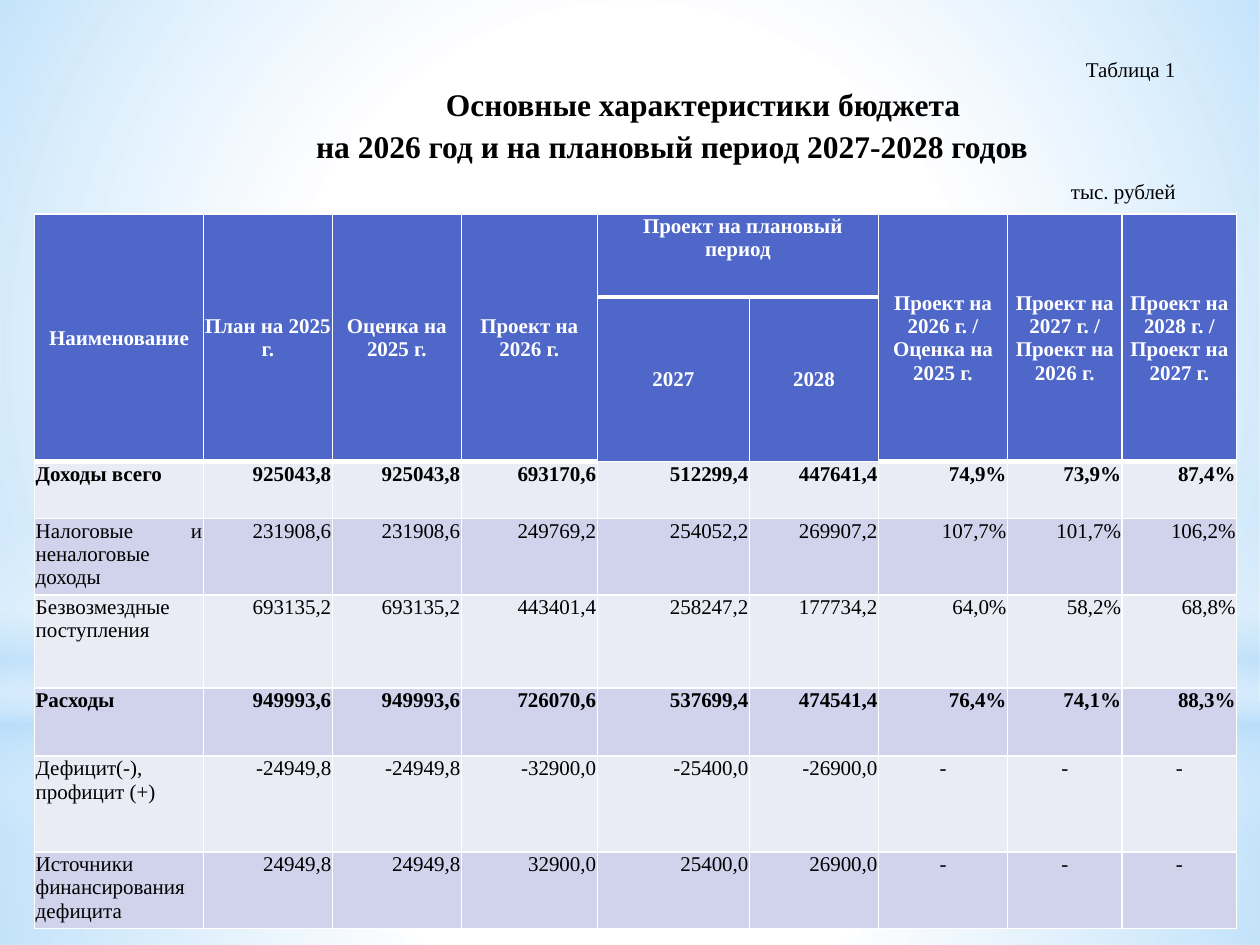
import pptx
import pptx.util
import pptx.dml.color
import pptx.enum.shapes
import pptx.enum.text
import pptx.oxml
import pptx.oxml.ns

Cm, Pt = pptx.util.Cm, pptx.util.Pt
ALIGN = pptx.enum.text.PP_ALIGN
ANCHOR = pptx.enum.text.MSO_ANCHOR
SHAPE = pptx.enum.shapes.MSO_SHAPE

COLOURS = {"white": "FFFFFF", "sky": "B4DCFA", "text": "000000",
           "header": "4E67C8", "light": "E9EBF5", "dark": "D0D3EB"}
NAMESPACE = pptx.oxml.ns.nsdecls("a")

COLUMN_WIDTHS = [3.4, 2.6, 2.6, 2.74, 3.07, 2.6, 2.6, 2.31, 2.31]
ROW_HEIGHTS = [1.68, 3.31, 1.15, 1.35, 1.88, 1.37, 1.93, 1.37]
PERIOD_COLUMNS = (4, 5)
HEADERS = ["Наименование", "План на 2025 г.", "Оценка на 2025 г.", "Проект на 2026 г.",
           "Проект на плановый период", None, "Проект на 2026 г. / Оценка на 2025 г.",
           "Проект на 2027 г. / Проект на 2026 г.", "Проект на 2028 г. / Проект на 2027 г."]
PERIODS = ["2027", "2028"]
BOLD_ROWS = ("Доходы всего", "Расходы")
BODY = [
    ["Доходы всего", "925043,8", "925043,8", "693170,6", "512299,4", "447641,4",
     "74,9%", "73,9%", "87,4%"],
    ["Налоговые и неналоговые доходы", "231908,6", "231908,6", "249769,2", "254052,2",
     "269907,2", "107,7%", "101,7%", "106,2%"],
    ["Безвозмездные поступления", "693135,2", "693135,2", "443401,4", "258247,2",
     "177734,2", "64,0%", "58,2%", "68,8%"],
    ["Расходы", "949993,6", "949993,6", "726070,6", "537699,4", "474541,4",
     "76,4%", "74,1%", "88,3%"],
    ["Дефицит(-), профицит (+)", "-24949,8", "-24949,8", "-32900,0", "-25400,0",
     "-26900,0", "-", "-", "-"],
    ["Источники финансирования дефицита", "24949,8", "24949,8", "32900,0", "25400,0",
     "26900,0", "-", "-", "-"],
]


class SlideBuilder:
    font_name = "Times New Roman"

    def __init__(self, slide):
        self.slide = slide

    def gradient_shape(self, kind, left, top, width, height, stops, angle=None):
        """Stops are (position, colour, opacity) in percent; radial without an angle."""
        shape = self.slide.shapes.add_shape(kind, Cm(left), Cm(top), Cm(width), Cm(height))
        shape.shadow.inherit = False
        shape.line.fill.background()
        stop_xml = "".join(
            f'<a:gs pos="{position * 1000}"><a:srgbClr val="{COLOURS[colour]}">'
            f'<a:alpha val="{opacity * 1000}"/></a:srgbClr></a:gs>'
            for position, colour, opacity in stops)
        if angle is None:
            direction = ('<a:path path="circle"><a:fillToRect l="50000" t="50000" '
                         'r="50000" b="50000"/></a:path>')
        else:
            direction = f'<a:lin ang="{angle * 60000}" scaled="0"/>'
        gradient = pptx.oxml.parse_xml(
            f'<a:gradFill {NAMESPACE} rotWithShape="1"><a:gsLst>{stop_xml}</a:gsLst>'
            f'{direction}</a:gradFill>')
        shape._element.spPr.find(pptx.oxml.ns.qn("a:prstGeom")).addnext(gradient)

    def fill_paragraph(self, paragraph, text, colour="text", size=12, bold=False,
                       align=ALIGN.LEFT, indent=0, space_before=0, line_spacing=1.0):
        properties = paragraph._p.get_or_add_pPr()
        properties.set("marL", "0")
        properties.set("indent", str(int(Cm(indent))))
        paragraph.text = text
        settings = {"alignment": align, "space_before": Pt(space_before),
                    "line_spacing": line_spacing}
        for name, value in settings.items():
            setattr(paragraph, name, value)
        for run in paragraph.runs:
            for name, value in {"name": self.font_name, "size": Pt(size), "bold": bold}.items():
                setattr(run.font, name, value)
            run.font.color.rgb = pptx.dml.color.RGBColor.from_string(COLOURS[colour])

    def text_box(self, left, top, width, height, paragraphs):
        box = self.slide.shapes.add_textbox(Cm(left), Cm(top), Cm(width), Cm(height))
        frame = box.text_frame
        frame.word_wrap = True
        frame.vertical_anchor = ANCHOR.MIDDLE
        for index, (text, style) in enumerate(paragraphs):
            paragraph = frame.add_paragraph() if index else frame.paragraphs[0]
            self.fill_paragraph(paragraph, text, **style)

    def table(self, left, top, widths, heights):
        table = self.slide.shapes.add_table(
            len(heights), len(widths), Cm(left), Cm(top),
            Cm(sum(widths)), Cm(sum(heights))).table
        table.horz_banding = False
        for column, width in zip(table.columns, widths):
            column.width = Cm(width)
        for row, height in zip(table.rows, heights):
            row.height = Cm(height)
        return table

    def cell(self, cell, fill, borders, text=None, anchor=ANCHOR.TOP, **style):
        settings = {"margin_left": Cm(0.02), "margin_right": Cm(0.02),
                    "margin_top": Cm(0.02), "margin_bottom": 0, "vertical_anchor": anchor}
        for name, value in settings.items():
            setattr(cell, name, value)
        cell.fill.solid()
        cell.fill.fore_color.rgb = pptx.dml.color.RGBColor.from_string(COLOURS[fill])
        properties = cell._tc.get_or_add_tcPr()
        for index, (side, width) in enumerate(borders.items()):
            properties.insert(index, pptx.oxml.parse_xml(
                f'<a:ln{side} {NAMESPACE} w="{int(Pt(width))}"><a:solidFill>'
                f'<a:srgbClr val="{COLOURS["white"]}"/></a:solidFill></a:ln{side}>'))
        if text is not None:
            self.fill_paragraph(cell.text_frame.paragraphs[0], text, **style)


def edge_width(row, column):
    """Width of the border under a cell: heavy below each header block."""
    heavy_row = 0 if column in PERIOD_COLUMNS else 1
    return 3 if row == heavy_row else 1


def add_background(builder):
    builder.gradient_shape(SHAPE.RECTANGLE, 0, 14.17, 25.4, 4.88,
                           [(0, "white", 91), (37, "white", 76), (100, "sky", 79)])
    builder.gradient_shape(SHAPE.RECTANGLE, 0, 0, 25.4, 14.17,
                           [(0, "white", 89), (48, "white", 62), (100, "sky", 79)])
    builder.gradient_shape(SHAPE.RECTANGLE, 0, 10.46, 25.4, 6.35,
                           [(0, "white", 0), (29, "white", 30), (45, "sky", 40),
                            (55, "white", 26), (65, "sky", 60), (100, "white", 0)], angle=90)
    builder.gradient_shape(SHAPE.OVAL, 0, 4.45, 25.4, 14.17,
                           [(0, "white", 100), (56, "white", 0)])


def add_budget_table(builder):
    table = builder.table(0.7, 4.31, COLUMN_WIDTHS, ROW_HEIGHTS)

    # Merged header cells
    for column in range(len(HEADERS)):
        if column not in PERIOD_COLUMNS:
            table.cell(0, column).merge(table.cell(1, column))
    first, last = PERIOD_COLUMNS
    table.cell(0, first).merge(table.cell(0, last))

    # Header and body cells
    period_row = [None] * len(HEADERS)
    period_row[first:last + 1] = PERIODS
    for row, texts in enumerate([HEADERS, period_row] + BODY):
        for column, text in enumerate(texts):
            borders = {"L": 1, "R": 1, "T": edge_width(row - 1, column),
                       "B": edge_width(row, column)}
            if row == 0 and column not in PERIOD_COLUMNS:
                borders["B"] = 3
            if row < 2:
                period_title = row == 0 and column == first
                style = {"fill": "header", "colour": "white", "bold": True,
                         "align": ALIGN.CENTER, "indent": 0.2 if period_title else 0,
                         "anchor": ANCHOR.TOP if period_title else ANCHOR.MIDDLE}
            else:
                align = (ALIGN.JUSTIFY if column == 0 else
                         ALIGN.CENTER if text == "-" else ALIGN.RIGHT)
                style = {"fill": "dark" if row % 2 else "light",
                         "bold": texts[0] in BOLD_ROWS, "align": align}
            builder.cell(table.cell(row, column), borders=borders, text=text, **style)


def main():
    presentation = pptx.Presentation()
    presentation.slide_width, presentation.slide_height = Cm(25.4), Cm(19.05)
    builder = SlideBuilder(presentation.slides.add_slide(presentation.slide_layouts[6]))

    add_background(builder)

    # Table number, title and unit
    builder.text_box(3.15, 1.09, 20.8, 3.07, [
        ("Таблица 1", {"align": ALIGN.RIGHT, "indent": 1.25}),
        ("Основные характеристики бюджета\vна 2026 год и на плановый период 2027-2028 годов",
         {"align": ALIGN.CENTER, "indent": 1.25, "size": 18, "bold": True,
          "line_spacing": 1.09}),
        ("тыс. рублей", {"align": ALIGN.RIGHT, "indent": 1.25, "space_before": 8}),
    ])

    add_budget_table(builder)
    presentation.save("out.pptx")


if __name__ == "__main__":
    main()
